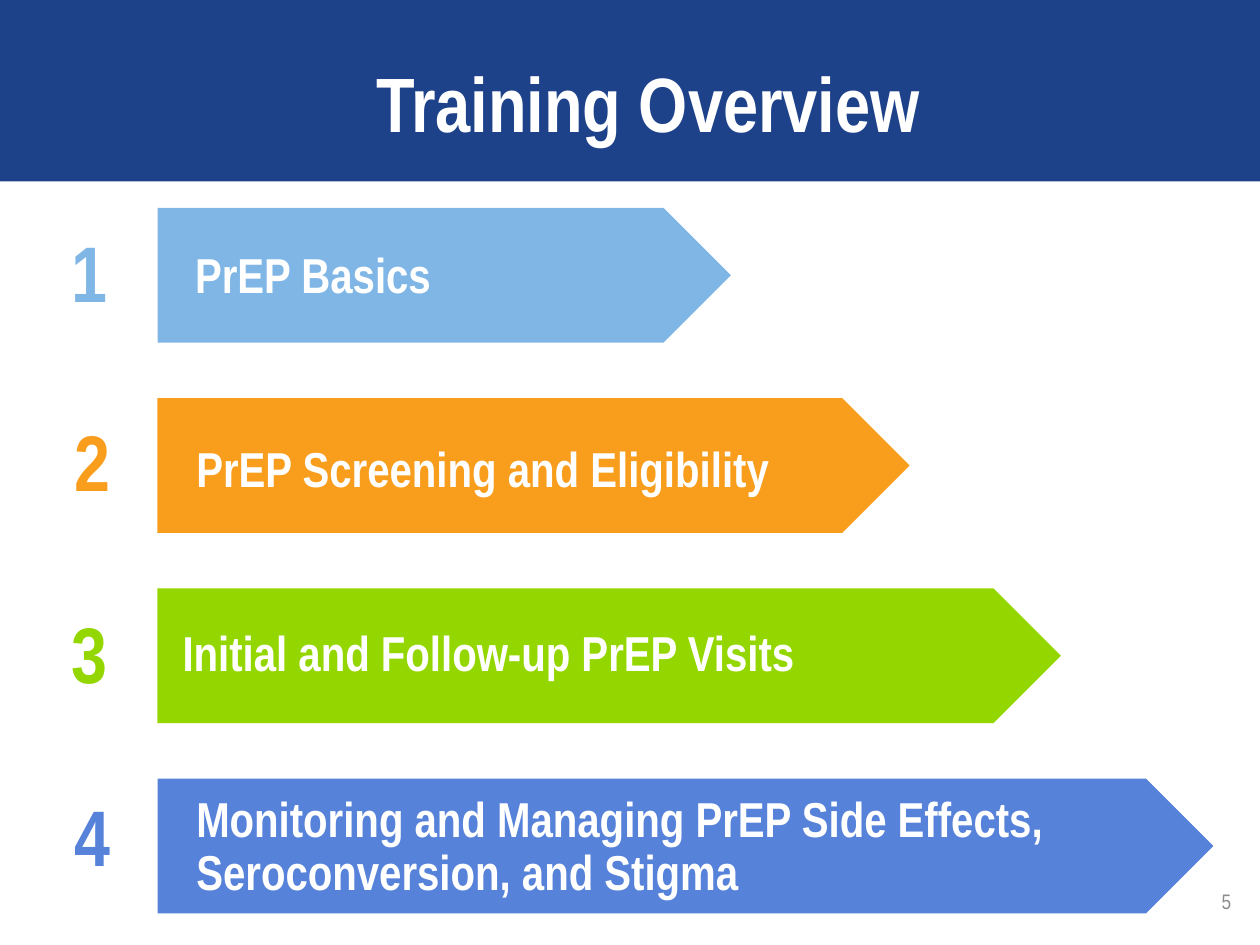
from dataclasses import dataclass

import pptx
import pptx.dml.color
import pptx.enum.shapes
import pptx.enum.text
import pptx.util

RGB = pptx.dml.color.RGBColor
ALIGN = pptx.enum.text.PP_ALIGN
ANCHOR = pptx.enum.text.MSO_ANCHOR
SHAPE = pptx.enum.shapes.MSO_SHAPE
Inches = pptx.util.Inches

NAVY = RGB(0x1E, 0x42, 0x8A)
SKY = RGB(0x80, 0xB6, 0xE6)
ORANGE = RGB(0xF9, 0x9D, 0x1C)
LIME = RGB(0x94, 0xD6, 0x00)
BLUE = RGB(0x56, 0x82, 0xDA)
WHITE = RGB(0xFF, 0xFF, 0xFF)
GREY = RGB(0x8C, 0x8C, 0x8C)

FONT = "Arial Narrow"
WIDE, HIGH = 10, 7.5
LEFT, TOP, PITCH, BAR = 1.25, 1.65, 1.51, 1.07


@dataclass(frozen=True)
class Box:
    x: float
    y: float
    w: float
    h: float

    def frame(self) -> tuple:
        return tuple(Inches(n) for n in (self.x, self.y, self.w, self.h))


@dataclass(frozen=True)
class Step:
    label: str
    color: RGB
    width: float
    text: Box
    digit: Box
    line: float = 1.0


STEPS = (
    Step("PrEP Basics", SKY, 4.55,
         Box(0.2, 0.24, 3.56, 0.57), Box(0.47, 0.08, 0.63, 0.86)),
    Step("PrEP Screening and Eligibility", ORANGE, 5.97,
         Box(0.21, 0.27, 5.29, 0.57), Box(0.49, 0.07, 0.63, 0.86)),
    Step("Initial and Follow-up PrEP Visits", LIME, 7.17,
         Box(0.1, 0.22, 6.09, 0.57), Box(0.47, 0.08, 0.63, 0.86)),
    Step("Monitoring and Managing PrEP Side Effects, Seroconversion, and Stigma",
         BLUE, 8.38,
         Box(0.21, 0.08, 7.62, 0.96), Box(0.49, 0.02, 0.63, 0.86), 0.9),
)


def shift(box: Box, x: float, y: float) -> Box:
    return Box(box.x + x, box.y + y, box.w, box.h)


def block(slide, kind, box: Box, color: RGB) -> None:
    shape = slide.shapes.add_shape(kind, *box.frame())
    shape.shadow.inherit = False
    shape.fill.solid()
    shape.fill.fore_color.rgb = color
    shape.line.fill.background()


def write(slide, text: str, box: Box, size: int, color: RGB, bold: bool = True,
          align=ALIGN.LEFT, anchor=ANCHOR.TOP, line: float = 1.0) -> None:
    frame = slide.shapes.add_textbox(*box.frame()).text_frame
    frame.word_wrap = True
    frame.vertical_anchor = anchor
    frame.text = text
    para = frame.paragraphs[0]
    para.alignment = align
    para.line_spacing = line
    font = para.runs[0].font
    font.name = FONT
    font.size = pptx.util.Pt(size)
    font.bold = bold
    font.color.rgb = color


def draw(slide, row: int, step: Step) -> None:
    top = TOP + row * PITCH
    block(slide, SHAPE.PENTAGON, Box(LEFT, top, step.width, BAR), step.color)
    write(slide, step.label, shift(step.text, LEFT, top), 28, WHITE,
          line=step.line)
    write(slide, str(row + 1), shift(step.digit, 0, top), 45, step.color)


def main() -> None:
    deck = pptx.Presentation()
    deck.slide_width, deck.slide_height = Inches(WIDE), Inches(HIGH)
    slide = deck.slides.add_slide(deck.slide_layouts[6])
    block(slide, SHAPE.RECTANGLE, Box(0, 0, WIDE, 1.44), NAVY)
    write(slide, "5", Box(7.54, 6.95, 2.33, 0.4), 12, GREY, bold=False,
          align=ALIGN.RIGHT, anchor=ANCHOR.MIDDLE)
    write(slide, "Training Overview", Box(0.45, 0.39, 9.39, 0.84), 44, WHITE,
          align=ALIGN.CENTER)
    for row, step in enumerate(STEPS):
        draw(slide, row, step)
    deck.save("out.pptx")


if __name__ == "__main__":
    main()
